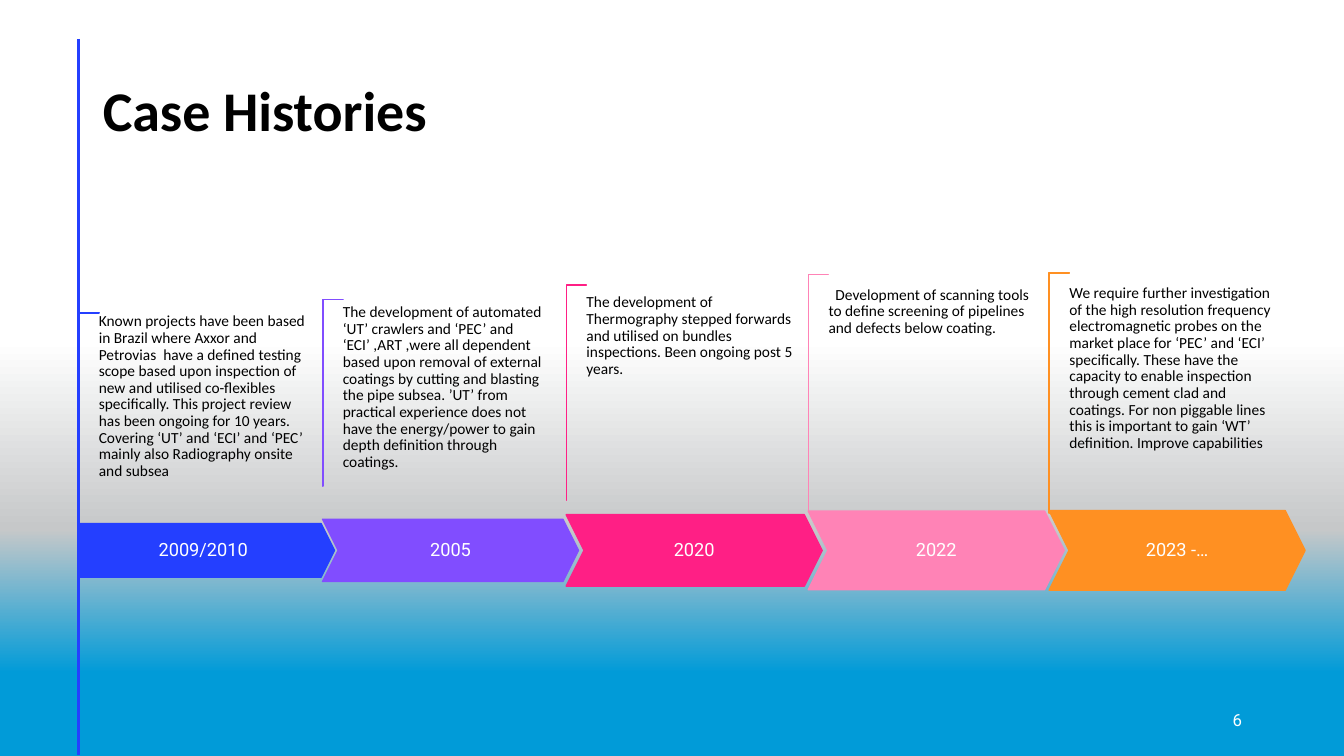
from copy import deepcopy

from lxml.etree import SubElement
from pptx import Presentation
from pptx.dml.color import RGBColor
from pptx.enum.shapes import MSO_CONNECTOR, MSO_SHAPE
from pptx.enum.text import MSO_ANCHOR, MSO_AUTO_SIZE, PP_ALIGN
from pptx.oxml.ns import qn
from pptx.util import Cm, Pt

COLORS = {
    "blue": "243FFF", "violet": "814DFF", "magenta": "FF1F85",
    "pink": "FF83B6", "orange": "FF9022", "black": "000000",
    "white": "FFFFFF", "grey": "C6C8C9", "sea": "019BD8",
}


def rgb(name):
    return RGBColor.from_string(COLORS[name])


def write(tf, text, size=11, font="Calibri", color="black", bold=False,
          align=PP_ALIGN.LEFT, anchor=MSO_ANCHOR.TOP, inset=(0, 0)):
    tf.word_wrap = True
    tf.auto_size = MSO_AUTO_SIZE.NONE
    tf.vertical_anchor = anchor
    tf.margin_left = tf.margin_right = Cm(inset[0])
    tf.margin_top = tf.margin_bottom = Cm(inset[1])
    p = tf.paragraphs[0]
    p.alignment = align
    p.line_spacing = 0.9
    r = p.add_run()
    r.text = text
    r.font.size = Pt(size)
    r.font.name = font
    r.font.bold = bold
    r.font.color.rgb = rgb(color)


prs = Presentation()
prs.slide_width, prs.slide_height = Cm(33.87), Cm(19.05)
s = prs.slides.add_slide(prs.slide_layouts[5])

# Background gradient, top to bottom
fill = s.background.fill
fill.gradient()
fill.gradient_angle = 270
gs_list = s.element.find(".//" + qn("a:gsLst"))
gs_list.append(deepcopy(gs_list[-1]))
for stop, (pos, name) in zip(fill.gradient_stops,
                             [(0.45, "white"), (0.7, "grey"), (0.89, "sea")]):
    stop.position = pos
    stop.color.rgb = rgb(name)

# Vertical rule at the left
rule = s.shapes.add_connector(MSO_CONNECTOR.STRAIGHT,
                              Cm(1.98), Cm(0.98), Cm(1.98), Cm(19.03))
rule.line.color.rgb = rgb("blue")
rule.line.width = Pt(2)
SubElement(rule._element.spPr, qn("a:effectLst"))

# Title
title = s.shapes.title
title.left, title.top, title.width, title.height = Cm(2.34), Cm(1.02), Cm(29.21), Cm(3.68)
write(title.text_frame, "Case Histories", size=40, bold=True,
      anchor=MSO_ANCHOR.MIDDLE, inset=(0.25, 0.13))

# Slide number
number = s.shapes.add_textbox(Cm(23.93), Cm(17.65), Cm(7.62), Cm(1.02))
write(number.text_frame, "6", size=12, font="Roboto", color="white",
      align=PP_ALIGN.RIGHT, anchor=MSO_ANCHOR.MIDDLE, inset=(0.25, 0.13))

# Timeline: left, bracket length, arrow height, note height, colour, year, note
STEPS = [
    (1.98, 4.04, 1.35, 2.82, "blue", "2009/2010",
     "Known projects have been based in Brazil where Axxor and Petrovias  have a "
     "defined testing scope based upon inspection of new and utilised co-flexibles "
     "specifically. This project review has been ongoing for 10 years. Covering ‘UT’ "
     "and ‘ECI’ and ‘PEC’ mainly also Radiography onsite and subsea"),
    (8.13, 4.7, 1.57, 3.28, "violet", "2005",
     "The development of automated ‘UT’ crawlers and ‘PEC’ and ‘ECI’ ,ART ,were all "
     "dependent based upon removal of external coatings by cutting and blasting the "
     "pipe subsea. ’UT’ from practical experience does not have the energy/power to "
     "gain depth definition through coatings."),
    (14.27, 5.44, 1.8, 3.78, "magenta", "2020",
     "The development of Thermography stepped forwards and utilised on bundles "
     "inspections. Been ongoing post 5 years."),
    (20.37, 5.97, 1.98, 4.17, "pink", "2022",
     "  Development of scanning tools to define screening of pipelines and defects "
     "below coating."),
    (26.44, 6.05, 2.01, 4.24, "orange", "2023 -…",
     "We require further investigation of the high resolution frequency "
     "electromagnetic probes on the market place for ‘PEC’ and ‘ECI’ specifically. "
     "These have the capacity to enable inspection through cement clad and coatings. "
     "For non piggable lines this is important to gain ‘WT’ definition. Improve "
     "capabilities"),
]
BRACKET_W, BRACKET_MID = 0.51, 9.9
ARROW_W, ARROW_MID = 6.45, 13.87
NOTE_W, NOTE_MID = 5.23, 9.31

for i, (left, length, arrow_h, note_h, color, year, note) in enumerate(STEPS):
    # Bracket, an L shape turned a quarter
    bracket = s.shapes.add_shape(
        MSO_SHAPE.CORNER, Cm(left + (BRACKET_W - length) / 2),
        Cm(BRACKET_MID - BRACKET_W / 2), Cm(length), Cm(BRACKET_W))
    bracket.rotation = 90
    bracket.adjustments[0] = bracket.adjustments[1] = 0.01

    # Arrow with its year
    arrow = s.shapes.add_shape(
        MSO_SHAPE.CHEVRON if i else MSO_SHAPE.PENTAGON,
        Cm(left), Cm(ARROW_MID - arrow_h / 2), Cm(ARROW_W), Cm(arrow_h))
    arrow.adjustments[0] = 0.25
    write(arrow.text_frame, year, size=13, font="Roboto", color="white",
          align=PP_ALIGN.CENTER, anchor=MSO_ANCHOR.MIDDLE, inset=(0.23, 0))

    for sp, fill_color in ((bracket, "white"), (arrow, color)):
        sp.shadow.inherit = False
        sp.fill.solid()
        sp.fill.fore_color.rgb = rgb(fill_color)
        sp.line.color.rgb = rgb(color)
        sp.line.width = Pt(1)

    # Note
    box = s.shapes.add_textbox(Cm(left + BRACKET_W), Cm(NOTE_MID - note_h / 2),
                               Cm(NOTE_W), Cm(note_h))
    write(box.text_frame, note)

prs.save("out.pptx")
